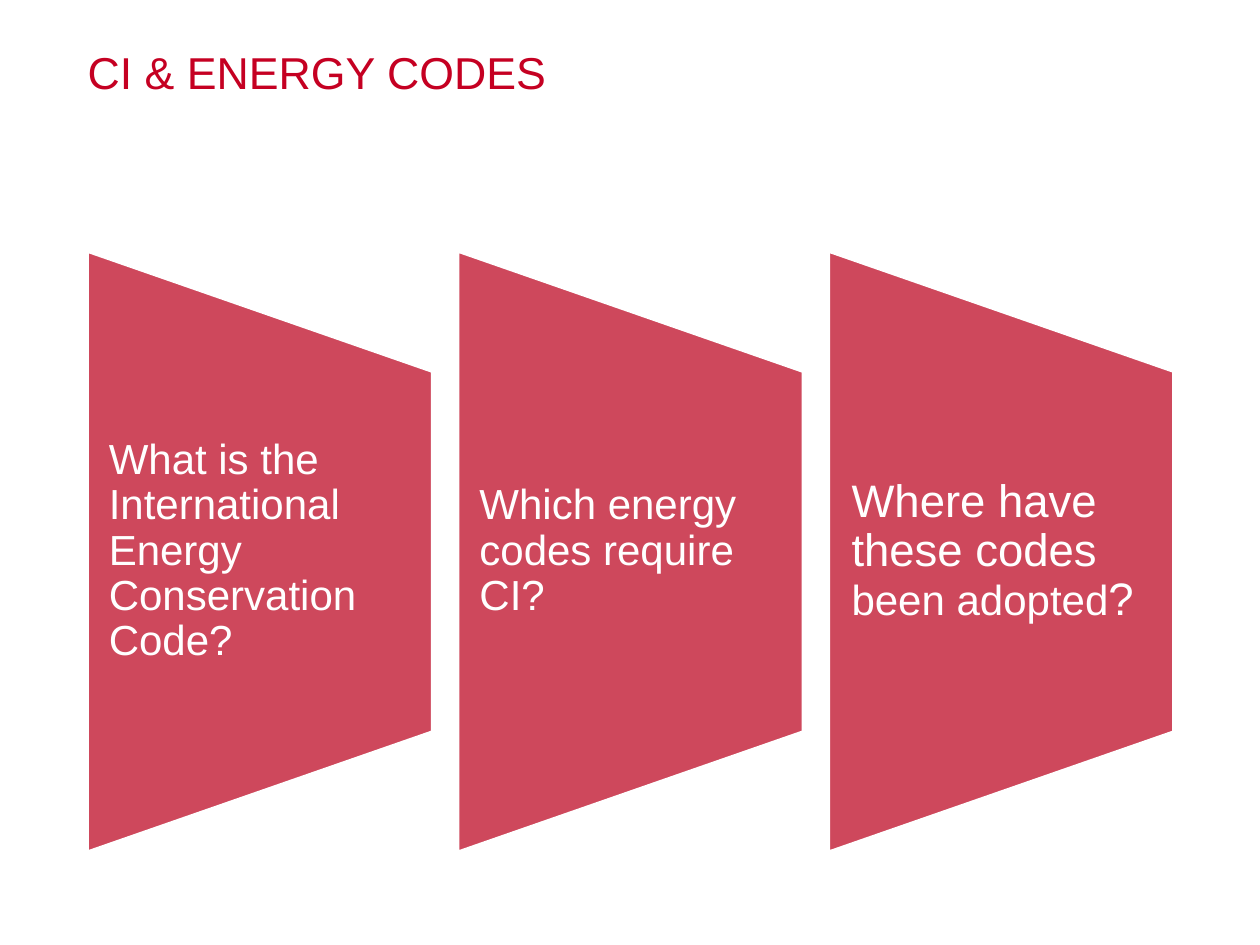
"""Build the energy codes slide with three question panels."""
import pptx
import pptx.dml.color
import pptx.enum.shapes
import pptx.enum.text
import pptx.util

Pt = pptx.util.Pt
RGBColor = pptx.dml.color.RGBColor
MSO_ANCHOR = pptx.enum.text.MSO_ANCHOR
PP_ALIGN = pptx.enum.text.PP_ALIGN

CRIMSON = RGBColor(0xC5, 0x00, 0x22)
ROSE = RGBColor(0xCE, 0x48, 0x5C)
WHITE = RGBColor(0xFF, 0xFF, 0xFF)

HEADING = "CI & ENERGY CODES"
QUESTIONS = [
    (12.2, [("What is the International Energy Conservation Code?", 24)]),
    (12.2, [("Which energy codes require CI?", 24)]),
    (13, [("Where have these codes ", 26), ("been adopted", 24), ("?", 26)]),
]

MARGIN = 50
PANEL_WIDTH, PANEL_HEIGHT = 197, 343
PANEL_PITCH = 211.8
PANEL_MIDDLE = 315.2
QUESTION_HEIGHT = 206


def set_frame(frame, anchor, inset=0):
    frame.word_wrap = True
    frame.auto_size = pptx.enum.text.MSO_AUTO_SIZE.NONE
    frame.vertical_anchor = anchor
    frame.margin_left = frame.margin_right = Pt(inset)
    frame.margin_top = frame.margin_bottom = 0


def set_paragraph(paragraph, color):
    paragraph.alignment = PP_ALIGN.LEFT
    paragraph.line_spacing = 0.9
    paragraph.font.name = "Arial"
    paragraph.font.color.rgb = color


def add_panel(slide, left):
    center = left + PANEL_WIDTH / 2
    panel = slide.shapes.add_shape(
        pptx.enum.shapes.MSO_SHAPE.FLOWCHART_MANUAL_OPERATION,
        Pt(center - PANEL_HEIGHT / 2), Pt(PANEL_MIDDLE - PANEL_WIDTH / 2),
        Pt(PANEL_HEIGHT), Pt(PANEL_WIDTH))
    panel.rotation = 270
    panel.shadow.inherit = False
    panel.fill.solid()
    panel.fill.fore_color.rgb = ROSE
    panel.line.color.rgb = WHITE
    panel.line.width = Pt(1.5)


def add_question(slide, left, inset, parts):
    question = slide.shapes.add_textbox(
        Pt(left), Pt(PANEL_MIDDLE - QUESTION_HEIGHT / 2),
        Pt(PANEL_WIDTH), Pt(QUESTION_HEIGHT))
    set_frame(question.text_frame, MSO_ANCHOR.MIDDLE, inset)
    paragraph = question.text_frame.paragraphs[0]
    set_paragraph(paragraph, WHITE)
    for words, size in parts:
        run = paragraph.add_run()
        run.text = words
        run.font.size = Pt(size)


def main():
    deck = pptx.Presentation()
    deck.slide_width, deck.slide_height = Pt(720), Pt(540)
    slide = deck.slides.add_slide(deck.slide_layouts[5])

    heading = slide.shapes.title
    heading.left, heading.top = Pt(MARGIN), Pt(29)
    heading.width, heading.height = Pt(720 - 2 * MARGIN), Pt(104)
    heading.text_frame.text = HEADING
    set_frame(heading.text_frame, MSO_ANCHOR.TOP)
    set_paragraph(heading.text_frame.paragraphs[0], CRIMSON)
    heading.text_frame.paragraphs[0].font.size = Pt(25.5)

    for column, (inset, parts) in enumerate(QUESTIONS):
        left = MARGIN + column * PANEL_PITCH
        add_panel(slide, left)
        add_question(slide, left, inset, parts)

    deck.save("out.pptx")


if __name__ == "__main__":
    main()
